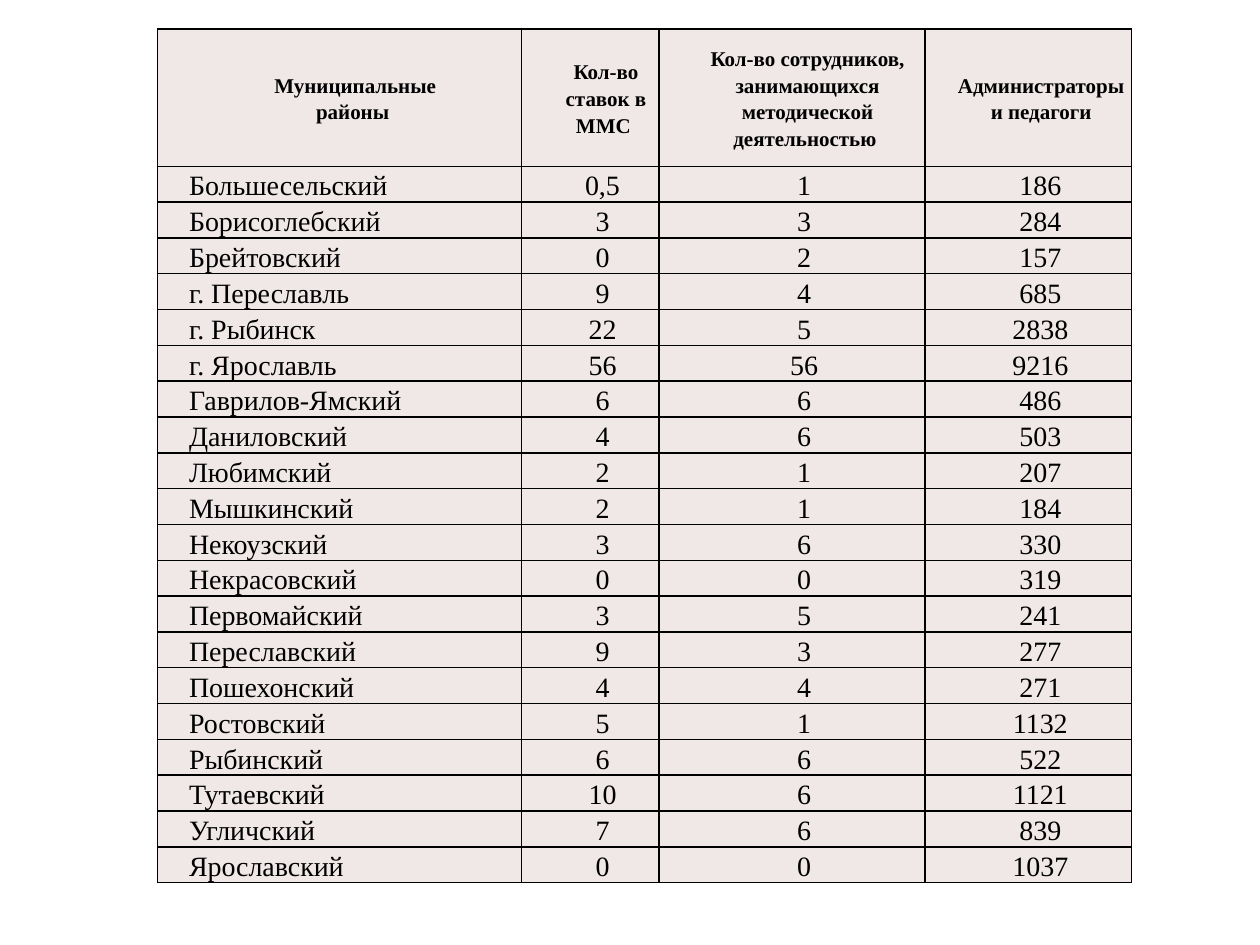
from copy import deepcopy

from lxml import etree
from pptx import Presentation
from pptx.dml.color import RGBColor
from pptx.enum.text import MSO_ANCHOR, PP_ALIGN
from pptx.oxml.ns import qn
from pptx.util import Inches, Pt

CENTER, JUSTIFY = PP_ALIGN.CENTER, PP_ALIGN.JUSTIFY
MIDDLE, BOTTOM = MSO_ANCHOR.MIDDLE, MSO_ANCHOR.BOTTOM
BLANK_LAYOUT = 6

COLORS = {"text": "000000", "border": "000000", "cell": "F0E8E7"}
FONT = "Times New Roman"

COLUMN_WIDTHS = [2.89, 1.09, 2.11, 1.64]
COLUMN_ALIGNS = [JUSTIFY, CENTER, CENTER, CENTER]
COLUMN_ANCHORS = [MIDDLE, BOTTOM, MIDDLE, BOTTOM]
HEADER_HEIGHT, DISTRICT_HEIGHT = 1.09, 0.22

# Each header is a list of paragraphs; \n breaks a line inside one.
HEADERS = [
    ["Муниципальные\nрайоны"],
    ["Кол-во ставок в ММС"],
    ["Кол-во сотрудников, занимающихся методической деятельностью"],
    ["Администраторы", "и педагоги"],
]
DISTRICTS = [
    ("Большесельский", "0,5", "1", "186"),
    ("Борисоглебский", "3", "3", "284"),
    ("Брейтовский", "0", "2", "157"),
    ("г. Переславль", "9", "4", "685"),
    ("г. Рыбинск", "22", "5", "2838"),
    ("г. Ярославль", "56", "56", "9216"),
    ("Гаврилов-Ямский", "6", "6", "486"),
    ("Даниловский", "4", "6", "503"),
    ("Любимский", "2", "1", "207"),
    ("Мышкинский", "2", "1", "184"),
    ("Некоузский", "3", "6", "330"),
    ("Некрасовский", "0", "0", "319"),
    ("Первомайский", "3", "5", "241"),
    ("Переславский", "9", "3", "277"),
    ("Пошехонский", "4", "4", "271"),
    ("Ростовский", "5", "1", "1132"),
    ("Рыбинский", "6", "6", "522"),
    ("Тутаевский", "10", "6", "1121"),
    ("Угличский", "7", "6", "839"),
    ("Ярославский", "0", "0", "1037"),
]


def write_paragraph(paragraph, text, *, size, bold=False, align=CENTER):
    paragraph.alignment = align
    paragraph.line_spacing = 1.15
    properties = paragraph._p.get_or_add_pPr()
    properties.set("marL", str(Inches(0.25)))
    properties.set("indent", "0")
    # Every entry in this table ends with one space.
    paragraph.text = f"{text} "
    for run in paragraph.runs:
        run.font.name = FONT
        run.font.size = Pt(size)
        run.font.bold = bold
        run.font.color.rgb = RGBColor.from_string(COLORS["text"])
    for line_break in paragraph._p.findall(qn("a:br")):
        line_break.append(deepcopy(paragraph.runs[0]._r.rPr))


def add_borders(cell):
    properties = cell._tc.get_or_add_tcPr()
    for side in ("lnL", "lnR", "lnT", "lnB"):
        border = etree.SubElement(properties, qn(f"a:{side}"), w=str(Pt(1)))
        fill = etree.SubElement(border, qn("a:solidFill"))
        etree.SubElement(fill, qn("a:srgbClr"), val=COLORS["border"])


def fill_cell(cell, paragraphs, *, anchor=MIDDLE, **text_format):
    cell.margin_left = cell.margin_right = 0
    cell.margin_top = cell.margin_bottom = 0
    cell.vertical_anchor = anchor
    add_borders(cell)
    cell.fill.solid()
    cell.fill.fore_color.rgb = RGBColor.from_string(COLORS["cell"])
    frame = cell.text_frame
    for index, text in enumerate(paragraphs):
        paragraph = frame.add_paragraph() if index else frame.paragraphs[0]
        write_paragraph(paragraph, text, **text_format)


def add_district_table(slide):
    row_heights = [HEADER_HEIGHT] + [DISTRICT_HEIGHT] * len(DISTRICTS)
    table_frame = slide.shapes.add_table(
        len(row_heights), len(COLUMN_WIDTHS),
        Inches(1.25), Inches(0.23), Inches(7.73), Inches(7.31))
    table = table_frame.table
    table.first_row = table.horz_banding = False
    for column, width in zip(table.columns, COLUMN_WIDTHS):
        column.width = Inches(width)
    for row, height in zip(table.rows, row_heights):
        row.height = Inches(height)
    table_frame.height = Inches(7.31)

    for column, header in enumerate(HEADERS):
        fill_cell(table.cell(0, column), header, size=12, bold=True)
    for row, district in enumerate(DISTRICTS, start=1):
        for column, value in enumerate(district):
            fill_cell(table.cell(row, column), [value], size=16,
                      align=COLUMN_ALIGNS[column],
                      anchor=COLUMN_ANCHORS[column])


def main():
    presentation = Presentation()
    presentation.slide_width = Inches(10)
    presentation.slide_height = Inches(7.5)
    layout = presentation.slide_layouts[BLANK_LAYOUT]
    add_district_table(presentation.slides.add_slide(layout))
    presentation.save("out.pptx")


if __name__ == "__main__":
    main()
